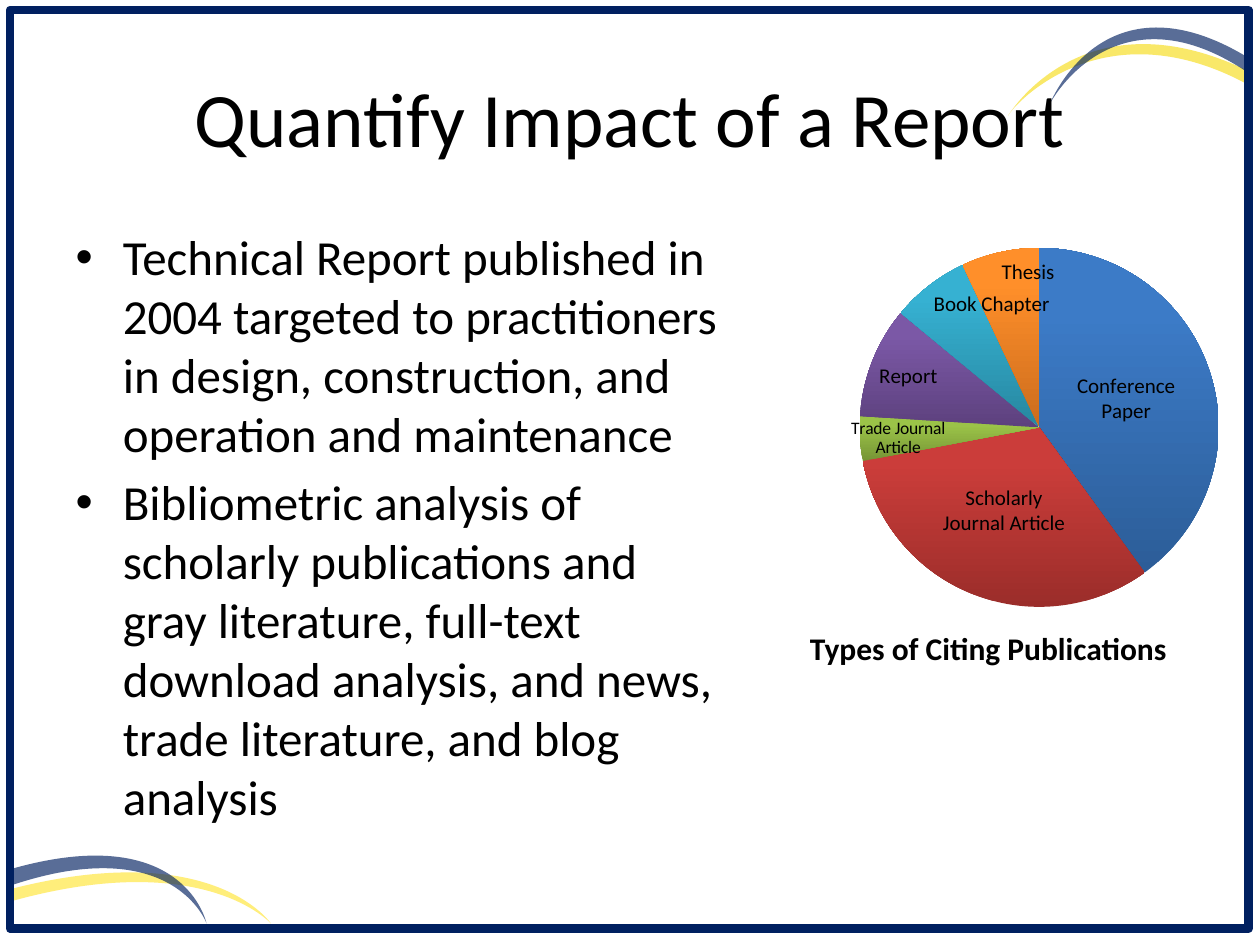
from lxml.etree import SubElement
from pptx import Presentation
from pptx.chart.data import CategoryChartData
from pptx.dml.color import RGBColor
from pptx.enum.chart import XL_CHART_TYPE, XL_LABEL_POSITION
from pptx.enum.shapes import MSO_SHAPE
from pptx.enum.text import MSO_ANCHOR, PP_ALIGN
from pptx.oxml import parse_xml
from pptx.oxml.ns import nsdecls, qn
from pptx.util import Inches, Pt

HUES = {"navy": "002060", "gold": "F6DC1A", "lemon": "FFE535", "black": "000000"}
SLICES = {
    "Conference Paper": (40, "2C5D98", "3C7BC7"),
    "Scholarly Journal Article": (32, "9B2D2A", "CB3D3A"),
    "Trade Journal Article": (4, "769535", "9BC348"),
    "Report": (10, "5D417E", "7B58A6"),
    "Book Chapter": (7, "2787A0", "36B1D2"),
    "Thesis": (7, "CB6C1D", "FF8F2A"),
}
LABELS = {
    0: (-0.05, 0, 12, "Conference Paper"),
    1: (-0.06, -0.13, 12, ""),
    2: (-0.03, 0, 10, "Trade Journal\nArticle"),
}
SWOOPS = [
    ("gold", False, [(9.92, 0.68), (8.74, 0.03), (8.03, 0.85), (8, 0.92),
                     (8, 0.92), (8.59, -0.08), (9.92, 0.57)]),
    ("navy", False, [(9.91, 0.58), (8.88, -0.12), (8.36, 0.76), (8.33, 0.83),
                     (8.33, 0.83), (8.75, -0.25), (9.91, 0.46)]),
    ("lemon", True, [(0.11, 7.05), (1.7, 6.65), (2.15, 7.33), (2.15, 7.33),
                     (2.15, 7.33), (1.62, 6.73), (0.1, 7.15)]),
    ("navy", True, [(0.08, 7.03), (1.32, 6.61), (1.62, 7.27), (1.64, 7.33),
                    (1.64, 7.33), (1.47, 6.5), (0.08, 6.9)]),
]
POINTS = [
    "Technical Report published in 2004 targeted to practitioners in design, "
    "construction, and operation and maintenance",
    "Bibliometric analysis of scholarly publications and gray literature, full-text "
    "download analysis, and news, trade literature, and blog analysis",
]


def tint(name):
    """Return the named colour."""
    return RGBColor.from_string(HUES[name])


def style(font, size, bold=None):
    """Apply the slide's type style to a font."""
    font.name, font.size, font.bold = "Calibri", Pt(size), bold
    font.color.rgb = tint("black")


def place(shape, left, top, width, height):
    """Move and size a shape, in inches."""
    shape.left, shape.top = Inches(left), Inches(top)
    shape.width, shape.height = Inches(width), Inches(height)


def bend(shape):
    """Turn each three line segments of an outline into one curve."""
    lines = list(shape._element.iter(qn("a:lnTo")))
    for first, *rest in zip(*[iter(lines)] * 3):
        first.tag = qn("a:cubicBezTo")
        for line in rest:
            first.append(line[0])
            line.getparent().remove(line)


def add_swoop(slide, hue, close, dots):
    """Draw a translucent crescent from two curves."""
    dots = [(Inches(x), Inches(y)) for x, y in dots]
    pen = slide.shapes.build_freeform(*dots[0])
    pen.add_line_segments(dots[1:], close=close)
    shape = pen.convert_to_shape()
    bend(shape)
    shape.shadow.inherit = False
    shape.fill.solid()
    shape.fill.fore_color.rgb = tint(hue)
    shade = shape.fill._xPr.find(".//" + qn("a:srgbClr"))
    SubElement(shade, qn("a:alpha"), val="65000")
    shape.line.fill.background()
    return shape


def add_frame(slide):
    """Draw the border around the slide."""
    box = [Inches(n) for n in (0.08, 0.08, 9.83, 7.29)]
    shape = slide.shapes.add_shape(MSO_SHAPE.RECTANGLE, *box)
    shape.shadow.inherit = False
    shape.fill.background()
    shape.line.color.rgb = tint("navy")
    shape.line.width = Pt(5)
    return shape


def fill_text(slide):
    """Fill the title and the bullet list."""
    title, body = slide.shapes.title, slide.placeholders[1]
    place(title, 0.5, 0.3, 9, 1.25)
    title.text_frame.text = "Quantify Impact of a Report"
    title.text_frame.vertical_anchor = MSO_ANCHOR.MIDDLE
    title.text_frame.paragraphs[0].alignment = PP_ALIGN.CENTER
    style(title.text_frame.paragraphs[0].runs[0].font, 44)
    place(body, 0.5, 1.75, 5.33, 4.95)
    body.text_frame.text = "\n".join(POINTS)
    for para in body.text_frame.paragraphs:
        style(para.runs[0].font, 28)


def layout(x, y, size=""):
    """Return a manual chart layout."""
    return parse_xml(
        f'<c:layout {nsdecls("c")}><c:manualLayout>{size}'
        f'<c:x val="{x}"/><c:y val="{y}"/></c:manualLayout></c:layout>')


def set_plot(chart):
    """Fix the pie's place inside the chart."""
    area = chart._chartSpace.chart.plotArea
    for old in area.findall(qn("c:layout")):
        area.remove(old)
    spot = layout(0.265, 0.043, '<c:layoutTarget val="inner"/>'
                  '<c:xMode val="edge"/><c:yMode val="edge"/>')
    for tag, part in (("c:w", 0.655), ("c:h", 0.9)):
        SubElement(spot[0], qn(tag), val=str(part))
    area.insert(0, spot)


def set_label(point, x, y, size, text):
    """Shift one slice label and show its text or category."""
    label = point.data_label
    if text:
        label.text_frame.text = text
        for para in label.text_frame.paragraphs:
            style(para.runs[0].font, size)
    else:
        style(label.font, size)
    label.position = XL_LABEL_POSITION.INSIDE_END
    node = label._dLbl
    node.find(qn("c:showVal")).set("val", "0")
    node.find(qn("c:showCatName")).set("val", "1")
    node.insert(1, layout(x, y))


def add_pie(slide):
    """Add the pie of citing publications."""
    data = CategoryChartData()
    data.categories = list(SLICES)
    data.add_series("Series 1", [row[0] for row in SLICES.values()])
    box = [Inches(n) for n in (5.67, 1.83, 4.35, 3.17)]
    chart = slide.shapes.add_chart(XL_CHART_TYPE.PIE, *box, data).chart
    chart.has_legend = chart.has_title = False
    style(chart.font, 10)
    set_plot(chart)
    plot = chart.plots[0]
    plot.vary_by_categories = True
    series = plot.series[0]
    labels = series.data_labels
    labels.show_value, labels.show_category_name = False, True
    labels.position = XL_LABEL_POSITION.INSIDE_END
    style(labels.font, 12)
    for i, (_, dark, light) in enumerate(SLICES.values()):
        fill = series.points[i].format.fill
        fill.gradient()
        fill.gradient_angle = 90
        for stop, hue, pos in zip(fill.gradient_stops, (dark, light), (0, 0.8)):
            stop.color.rgb = RGBColor.from_string(hue)
            stop.position = pos
    for i, label in LABELS.items():
        set_label(series.points[i], *label)


def add_note(slide):
    """Add the caption under the pie."""
    box = slide.shapes.add_textbox(*[Inches(n) for n in (6.33, 4.94, 3.06, 0.4)])
    box.text_frame.text = "Types of Citing Publications"
    style(box.text_frame.paragraphs[0].runs[0].font, 18, True)


def main():
    """Build the slide and save it."""
    deck = Presentation()
    deck.slide_width, deck.slide_height = Inches(10), Inches(7.5)
    slide = deck.slides.add_slide(deck.slide_layouts[1])
    back = [add_swoop(slide, *swoop) for swoop in SWOOPS] + [add_frame(slide)]
    for i, shape in enumerate(back, 2):
        slide.shapes._spTree.insert(i, shape._element)
    fill_text(slide)
    add_pie(slide)
    add_note(slide)
    deck.save("out.pptx")


if __name__ == "__main__":
    main()
